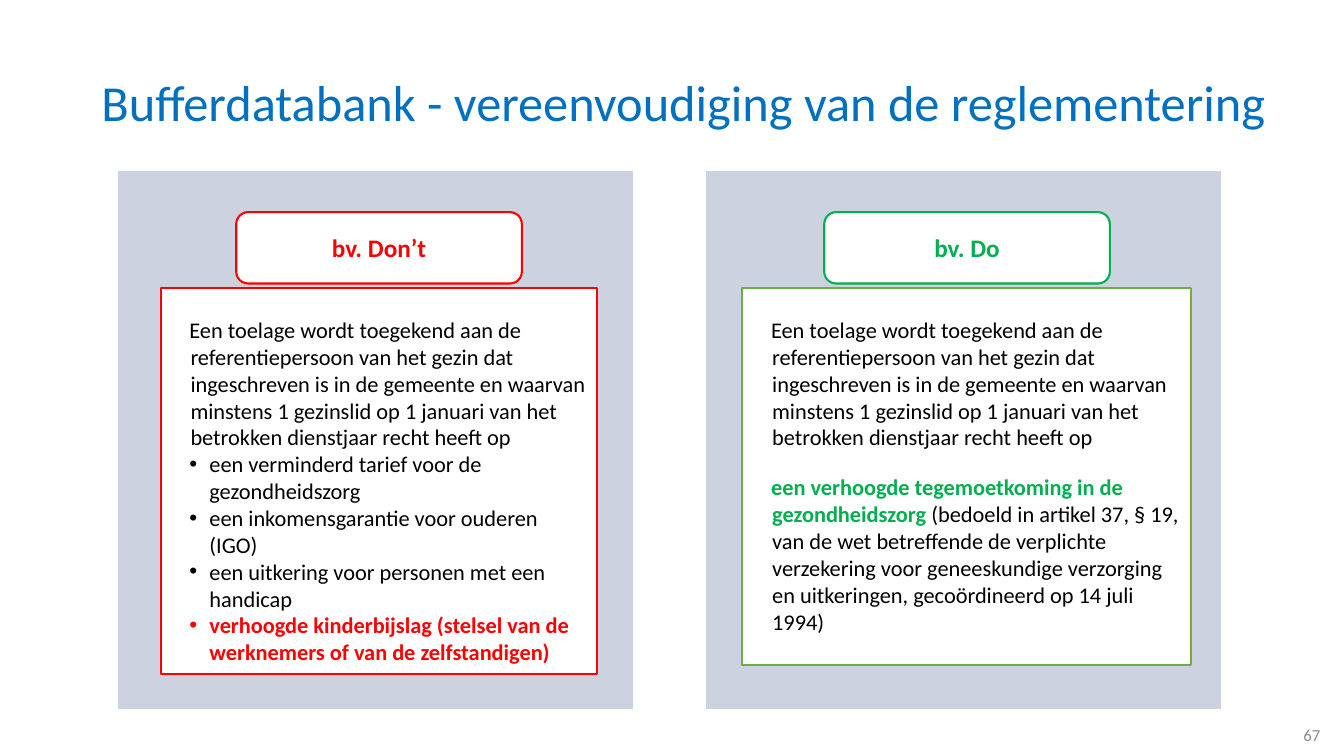
from dataclasses import dataclass
from lxml import etree
from pptx import Presentation, util as u
from pptx.dml import color as c
from pptx.enum import shapes, text
from pptx.oxml import ns

PX = 9525
KIND = shapes.MSO_SHAPE
ALIGN = text.PP_ALIGN
ANCHOR = text.MSO_ANCHOR


@dataclass(frozen=True)
class Theme:
    font: str = "Calibri"
    navy: str = "002060"
    blue: str = "0070C0"
    red: str = "FF0000"
    green: str = "00B050"
    leaf: str = "70AD47"
    white: str = "FFFFFF"
    black: str = "000000"
    gray: str = "8C8C8C"
    head: int = 36
    label: int = 18
    body: int = 16
    foot: int = 12


def px(n):
    return u.Emu(n * PX)


def apply(item, style):
    for name, value in style.items():
        setattr(item, name, value)


class Deck:
    def __init__(self, theme):
        self.theme = theme
        self.prs = Presentation()
        apply(self.prs, {"slide_width": px(1280), "slide_height": px(720)})
        self.slide = self.prs.slides.add_slide(self.prs.slide_layouts[5])

    def fill_para(self, para, runs, size, **style):
        apply(para, style)
        for words, color, bold in runs:
            run = para.add_run()
            run.text = words
            apply(run.font, {"name": self.theme.font, "size": u.Pt(size), "bold": bold})
            run.font.color.rgb = c.RGBColor.from_string(color)

    def frame(self, shape, anchor=ANCHOR.MIDDLE, **style):
        frame = shape.text_frame
        apply(frame, {"word_wrap": True, "auto_size": text.MSO_AUTO_SIZE.NONE,
                      "vertical_anchor": anchor, **style})
        return frame

    def shape(self, kind, box, fill, line, width):
        shape = self.slide.shapes.add_shape(kind, *map(px, box))
        shape.shadow.inherit = False
        shape.fill.solid()
        shape.fill.fore_color.rgb = c.RGBColor.from_string(fill)
        shape.line.color.rgb = c.RGBColor.from_string(line)
        shape.line.width = u.Pt(width)
        return shape

    def title(self, box, words):
        shape = self.slide.shapes.title
        apply(shape, dict(zip(("left", "top", "width", "height"), map(px, box))))
        para = self.frame(shape).paragraphs[0]
        self.fill_para(para, [(words, self.theme.blue, False)], self.theme.head,
                       alignment=ALIGN.LEFT, line_spacing=0.9)

    def panel(self, box):
        shape = self.shape(KIND.RECTANGLE, box, self.theme.navy, self.theme.white, 1)
        tint = shape.element.spPr.find(ns.qn("a:solidFill")).find(ns.qn("a:srgbClr"))
        etree.SubElement(tint, ns.qn("a:alpha"), val="20000")

    def badge(self, box, words, color):
        shape = self.shape(KIND.ROUNDED_RECTANGLE, box, self.theme.white, color, 1.5)
        para = self.frame(shape).paragraphs[0]
        self.fill_para(para, [(words, color, True)], self.theme.label,
                       alignment=ALIGN.CENTER)

    def card(self, box, line, paras):
        shape = self.shape(KIND.RECTANGLE, box, self.theme.white, line, 1.5)
        frame = self.frame(shape, ANCHOR.TOP, margin_top=px(27))
        for i, (runs, dot, gap) in enumerate(paras):
            para = frame.add_paragraph() if i else frame.paragraphs[0]
            left, hang = (37, -19) if dot else (19, -1)
            props = para._p.get_or_add_pPr()
            props.set("marL", str(px(left)))
            props.set("indent", str(px(hang)))
            if dot:
                etree.SubElement(props, ns.qn("a:buFont"), typeface="Arial")
                etree.SubElement(props, ns.qn("a:buChar"), char="•")
            style = {"space_before": u.Pt(gap)} if gap else {}
            self.fill_para(para, runs, self.theme.body, alignment=ALIGN.LEFT, **style)

    def number(self, box, words):
        shape = self.slide.shapes.add_textbox(*map(px, box))
        para = self.frame(shape).paragraphs[0]
        self.fill_para(para, [(words, self.theme.gray, False)], self.theme.foot,
                       alignment=ALIGN.RIGHT)


def main():
    t = Theme()
    deck = Deck(t)
    deck.title((87, 31, 1151, 139), "Bufferdatabank - vereenvoudiging van de reglementering")

    intro = ("Een toelage wordt toegekend aan de referentiepersoon van het gezin dat "
             "ingeschreven is in de gemeente en waarvan minstens 1 gezinslid op 1 januari "
             "van het betrokken dienstjaar recht heeft op")
    start = ([(intro, t.black, False)], False, 0)
    rights = ["een verminderd tarief voor de gezondheidszorg",
              "een inkomensgarantie voor ouderen (IGO)",
              "een uitkering voor personen met een handicap"]
    dont = [start, *[([(right, t.black, False)], True, 0) for right in rights],
            ([("verhoogde kinderbijslag (stelsel van de werknemers of van de zelfstandigen)",
               t.red, True)], True, 0)]
    do = [start,
          ([("een verhoogde tegemoetkoming in de gezondheidszorg", t.green, True),
            (" (bedoeld in artikel 37, § 19, van de wet betreffende de verplichte "
             "verzekering voor geneeskundige verzorging en uitkeringen, "
             "gecoördineerd op 14 juli 1994)", t.black, False)], False, 16.5)]

    sides = [("bv. Don’t", t.red, t.red, (153, 274, 416, 368), dont),
             ("bv. Do", t.green, t.leaf, (707, 274, 427, 359), do)]
    for i, (label, color, line, box, paras) in enumerate(sides):
        shift = 560 * i
        deck.panel((112 + shift, 162, 492, 514))
        deck.badge((225 + shift, 202, 272, 68), label, color)
        deck.card(box, line, paras)

    deck.number((979, 681, 288, 38), "67")
    deck.prs.save("out.pptx")


if __name__ == "__main__":
    main()
